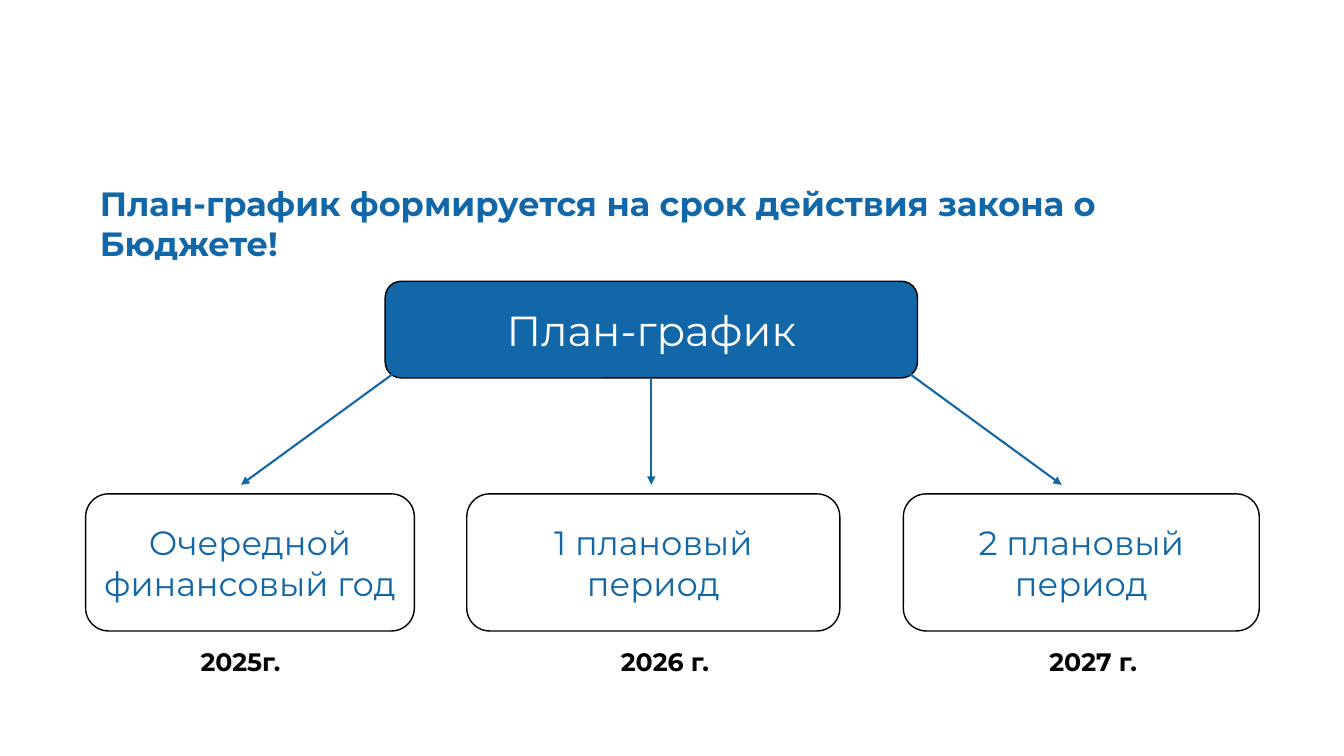
from dataclasses import dataclass

import pptx
import pptx.dml.color
import pptx.enum.shapes
import pptx.enum.text
import pptx.oxml.ns
import pptx.util
from lxml import etree
from pptx.enum.text import MSO_ANCHOR, PP_ALIGN
from pptx.util import Inches

FONT = "Montserrat"
BLUE, WHITE, BLACK = "1267A8", "FFFFFF", "000000"
BOX_TOP, BOX_HEIGHT = 4.9, 1.36
YEAR_TOP, ARROW_END = 6.36, 4.81


@dataclass
class Period:
    text: str
    left: float
    width: float
    year: str
    year_left: float
    year_width: float
    arrow_from: tuple[float, float]
    arrow_x: float


PERIODS = [
    Period("Очередной финансовый год", 0.85, 3.26, "2025г.", 1.89, 1.11, (3.91, 3.7), 2.39),
    Period("1 плановый период", 4.63, 3.7, "2026 г.", 6.06, 1.26, (6.46, 3.75), 6.46),
    Period("2 плановый период", 8.96, 3.53, "2027 г.", 10.31, 1.3, (9.01, 3.7), 10.53),
]


def rgb(value: str) -> pptx.dml.color.RGBColor:
    return pptx.dml.color.RGBColor.from_string(value)


def put_text(sp, text: str, *, size: float, color: str, bold: bool = False,
             align=PP_ALIGN.LEFT, anchor=MSO_ANCHOR.TOP) -> None:
    tf = sp.text_frame
    tf.word_wrap = True
    tf.auto_size = pptx.enum.text.MSO_AUTO_SIZE.NONE
    tf.vertical_anchor = anchor
    p = tf.paragraphs[0]
    p.alignment = align
    r = p.add_run()
    r.text = text
    r.font.name = FONT
    r.font.size = pptx.util.Pt(size)
    r.font.bold = bold
    r.font.color.rgb = rgb(color)


def add_box(s, text: str, left: float, top: float, width: float, height: float, *,
            fill: str, color: str, size: float) -> None:
    sp = s.shapes.add_shape(pptx.enum.shapes.MSO_SHAPE.ROUNDED_RECTANGLE,
                            Inches(left), Inches(top), Inches(width), Inches(height))
    sp.shadow.inherit = False
    sp.fill.solid()
    sp.fill.fore_color.rgb = rgb(fill)
    sp.line.color.rgb = rgb(BLACK)
    sp.line.width = pptx.util.Pt(1)
    put_text(sp, text, size=size, color=color, align=PP_ALIGN.CENTER, anchor=MSO_ANCHOR.MIDDLE)


def add_arrow(s, start: tuple[float, float], end: tuple[float, float]) -> None:
    cxn = s.shapes.add_connector(pptx.enum.shapes.MSO_CONNECTOR.STRAIGHT,
                                 *map(Inches, start + end))
    cxn.line.color.rgb = rgb(BLUE)
    cxn.line.width = pptx.util.Pt(1.5)
    qn = pptx.oxml.ns.qn
    etree.SubElement(cxn.line._get_or_add_ln(), qn("a:tailEnd"), type="triangle")
    etree.SubElement(cxn._element.spPr, qn("a:effectLst"))


def main() -> None:
    prs = pptx.Presentation()
    prs.slide_width, prs.slide_height = Inches(13.33), Inches(7.5)
    s = prs.slides.add_slide(prs.slide_layouts[5])

    # Title
    title = s.shapes.title
    title.left, title.top = Inches(0.89), Inches(1.76)
    title.width, title.height = Inches(11.89), Inches(0.9)
    put_text(title, "План-график формируется на срок действия закона о Бюджете!",
             size=24, color=BLUE, bold=True)

    # Schedule box
    add_box(s, "План-график", 3.82, 2.79, 5.28, 0.96, fill=BLUE, color=WHITE, size=30)

    # Periods with their arrows and years
    for period in PERIODS:
        add_box(s, period.text, period.left, BOX_TOP, period.width, BOX_HEIGHT,
                fill=WHITE, color=BLUE, size=24)
        add_arrow(s, period.arrow_from, (period.arrow_x, ARROW_END))
        year = s.shapes.add_textbox(Inches(period.year_left), Inches(YEAR_TOP),
                                    Inches(period.year_width), Inches(0.4))
        put_text(year, period.year, size=18, color=BLACK, bold=True)

    prs.save("out.pptx")


if __name__ == "__main__":
    main()
